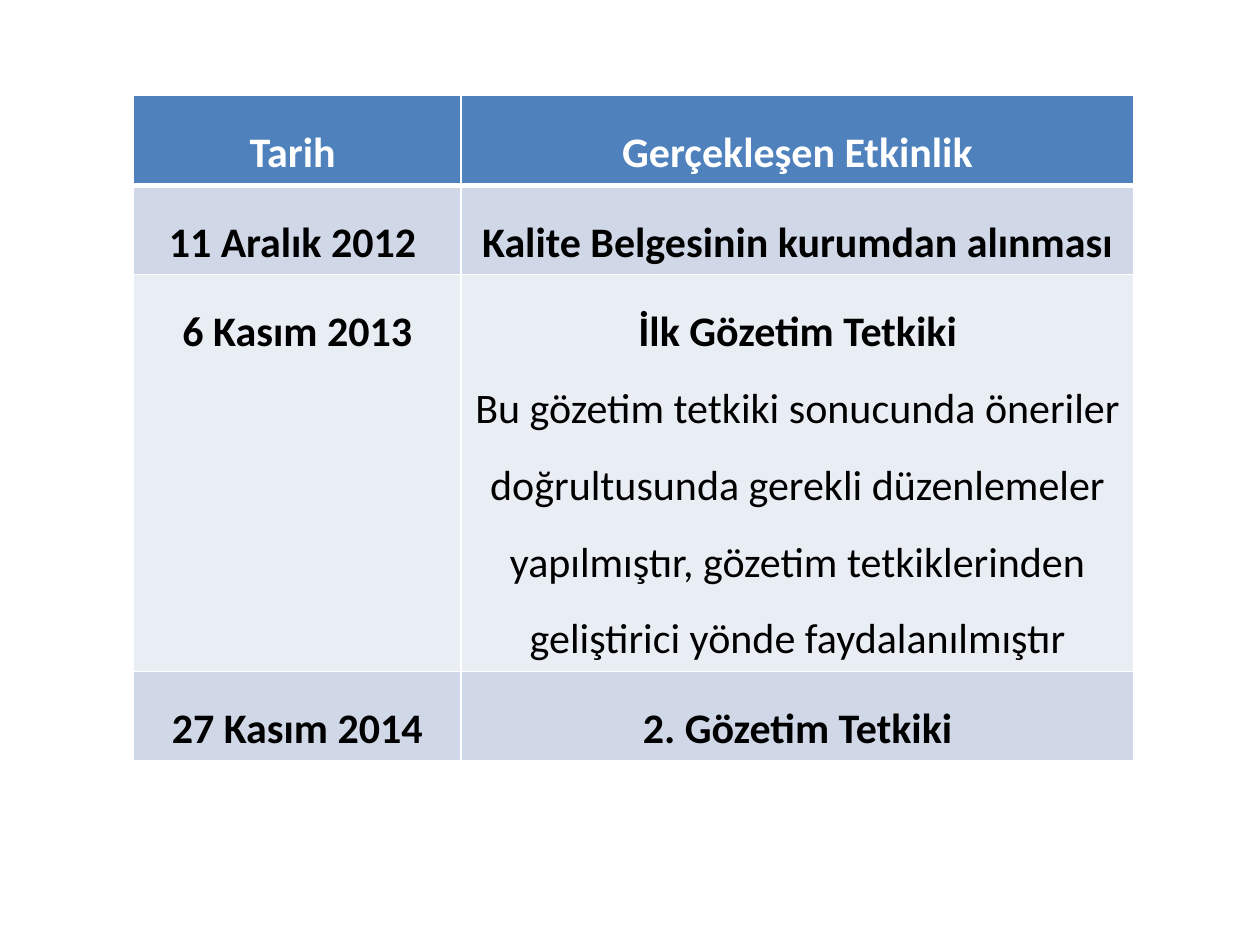
from lxml import etree
from pptx import Presentation
from pptx import util as u
from pptx.dml import color
from pptx.enum import text
from pptx.oxml import ns

ROWS = [
    (["Tarih "], ["Gerçekleşen Etkinlik"]),
    (["11 Aralık 2012 "], ["Kalite Belgesinin kurumdan alınması"]),
    (["6 Kasım 2013"], [
        "İlk Gözetim Tetkiki",
        "Bu gözetim tetkiki sonucunda öneriler doğrultusunda gerekli düzenlemeler "
        "yapılmıştır, gözetim tetkiklerinden geliştirici yönde faydalanılmıştır",
    ]),
    (["27 Kasım 2014"], ["2. Gözetim Tetkiki"]),
]
LEFT, TOP, HEIGHT = 76.3, 54.7, 375.1
COLUMN_WIDTHS = [187.2, 384.5]
ROW_HEIGHTS = [51.1, 34.6, 34.6, 34.6]
HEADER, BANDS = "4F81BD", ["E9EDF4", "D0D8E8"]
WHITE, BLACK = "FFFFFF", "000000"
PARAGRAPH = {"alignment": text.PP_ALIGN.CENTER, "line_spacing": 1.5}
FONT = {"name": "Calibri", "size": u.Pt(24)}


def rgb(value):
    return color.RGBColor.from_string(value)


def apply(target, values):
    for name, value in values.items():
        setattr(target, name, value)


def add_borders(cell, widths):
    properties = cell._tc.get_or_add_tcPr()
    for index, (side, width) in enumerate(widths.items()):
        line = etree.Element(ns.qn(f"a:ln{side}"), w=str(u.Pt(width)))
        fill = etree.SubElement(line, ns.qn("a:solidFill"))
        etree.SubElement(fill, ns.qn("a:srgbClr"), val=WHITE)
        properties.insert(index, line)


def fill_cell(cell, paragraphs, row):
    cell.fill.solid()
    cell.fill.fore_color.rgb = rgb(BANDS[row % 2] if row else HEADER)
    add_borders(cell, {"L": 1, "R": 1, "T": 3 if row == 1 else 1, "B": 1 if row else 3})
    frame = cell.text_frame
    for index, wording in enumerate(paragraphs):
        para = frame.add_paragraph() if index else frame.paragraphs[0]
        apply(para, PARAGRAPH)
        span = para.add_run()
        span.text = wording
        apply(span.font, {**FONT, "bold": index == 0})
        span.font.color.rgb = rgb(BLACK if row else WHITE)


def main():
    deck = Presentation()
    apply(deck, {"slide_width": u.Pt(720), "slide_height": u.Pt(540)})
    page = deck.slides.add_slide(deck.slide_layouts[6])
    holder = page.shapes.add_table(
        len(ROWS), len(COLUMN_WIDTHS), u.Pt(LEFT), u.Pt(TOP),
        u.Pt(sum(COLUMN_WIDTHS)), u.Pt(HEIGHT))
    table = holder.table
    for column, width in zip(table.columns, COLUMN_WIDTHS):
        column.width = u.Pt(width)
    for row, (cells, height) in enumerate(zip(ROWS, ROW_HEIGHTS)):
        table.rows[row].height = u.Pt(height)
        for column, paragraphs in enumerate(cells):
            fill_cell(table.cell(row, column), paragraphs, row)
    holder.height = u.Pt(HEIGHT)
    deck.save("out.pptx")


if __name__ == "__main__":
    main()
